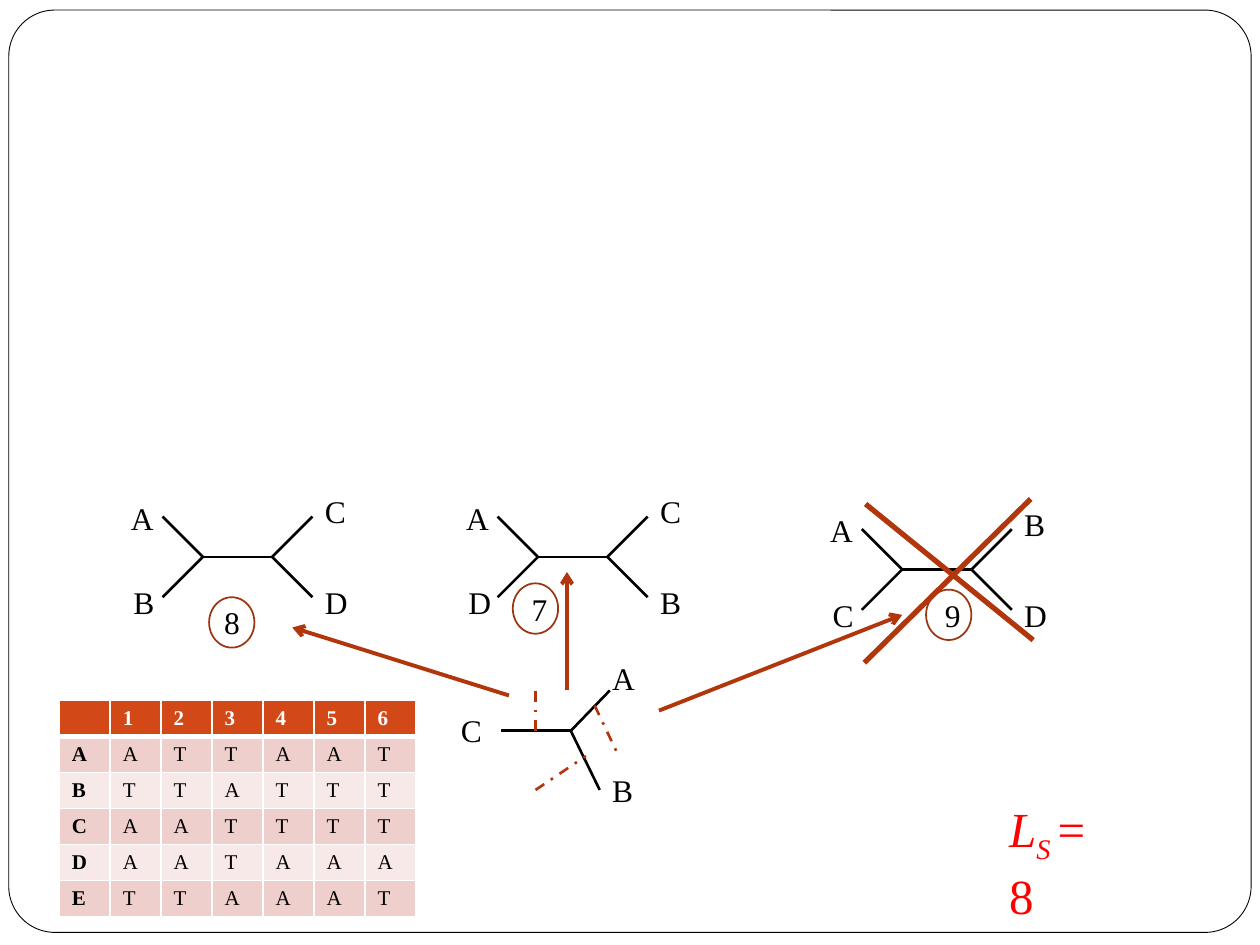
from lxml.etree import SubElement
from pptx import Presentation
from pptx.dml.color import RGBColor
from pptx.enum.dml import MSO_LINE
from pptx.enum.shapes import MSO_CONNECTOR, MSO_SHAPE
from pptx.enum.text import MSO_AUTO_SIZE
from pptx.oxml.ns import qn
from pptx.util import Inches, Pt

FONT = "Times New Roman"
BLACK, WHITE, RED = "000000", "FFFFFF", "FF0000"
RUST, RING, HEADER = "B1360B", "9C3511", "D34817"
BANDS = ("EFCFCC", "F7E9E8")

# Content: character matrix, one string of sites per taxon
SITES = "123456"
MATRIX = {"A": "ATTAAT", "B": "TTATTT", "C": "AATTTT",
          "D": "AATAAA", "E": "TTAAAT"}
TABLE_LEFT, TABLE_TOP, COLUMN, ROW = 0.47, 5.56, 0.4045, 0.24

# Left node of each tree; taxa at upper left, lower left, upper right, lower right
TREES = [((1.61, 4.42), "ABCD"), ((4.27, 4.42), "ADCB"), ((7.16, 4.52), "ACBD")]
SPINE, BRANCH = 0.55, 0.32
LABEL_OFFSETS = [(-0.67, -0.51), (-0.65, 0.16), (0.87, -0.56), (0.87, 0.16)]
LABEL_WIDTHS = {"A": 0.35, "B": 0.33, "C": 0.36, "D": 0.37}
LABEL_HEIGHT = 0.4

# Score, left of its ring, left of its digit, top
SCORES = [("8", 1.66, 1.68, 4.74), ("7", 4.07, 4.12, 4.63), ("9", 7.35, 7.4, 4.68)]

# Three-taxon starting tree: taxon, branch tip, label corner
START_NODE = (4.53, 5.8)
START_TREE = [("A", (4.84, 5.48), (4.76, 5.18)),
              ("B", (4.76, 6.27), (4.76, 6.07)),
              ("C", (3.98, 5.8), (3.56, 5.59))]
INSERTIONS = [((4.25, 5.8), (4.25, 5.45)), ((4.72, 5.6), (4.91, 6)),
              ((4.25, 6.27), (4.65, 6))]
ARROWS = [((4.04, 5.52), (2.32, 4.98)), ((4.5, 5.48), (4.5, 4.54)),
          ((5.23, 5.64), (7.16, 4.88))]
CROSS = [((8.18, 3.96), (6.86, 5.26)), ((6.87, 4), (8.2, 5.08))]


def rgb(color):
    return RGBColor.from_string(color)


def style(font, size, color, bold=False):
    font.name, font.size, font.bold = FONT, Pt(size), bold
    font.color.rgb = rgb(color)


def add_line(shapes, start, end, color=BLACK, width=1.5, dash=None, arrow=False):
    line = shapes.add_connector(MSO_CONNECTOR.STRAIGHT,
                                *(Inches(v) for v in (*start, *end)))
    line.line.color.rgb = rgb(color)
    line.line.width = Pt(width)
    if dash:
        line.line.dash_style = dash
    properties = line._element.spPr
    if arrow:
        SubElement(properties.find(qn("a:ln")), qn("a:tailEnd"), type="arrow")
    SubElement(properties, qn("a:effectLst"))


def add_text(shapes, left, top, width, height, wrap=False):
    box = shapes.add_textbox(*(Inches(v) for v in (left, top, width, height)))
    box.text_frame.word_wrap = wrap
    box.text_frame.auto_size = MSO_AUTO_SIZE.SHAPE_TO_FIT_TEXT
    return box.text_frame.paragraphs[0]


def add_label(shapes, text, left, top):
    label = add_text(shapes, left, top, LABEL_WIDTHS.get(text, 0.32), LABEL_HEIGHT)
    label.text = text
    style(label.font, 18, BLACK)


def add_outline(shapes, kind, left, top, width, height, color, weight):
    outline = shapes.add_shape(kind, *(Inches(v) for v in (left, top, width, height)))
    outline.shadow.inherit = False
    outline.fill.background()
    outline.line.color.rgb = rgb(color)
    outline.line.width = Pt(weight)
    return outline


def add_tree(shapes, node, taxa):
    x, y = node
    right = x + SPINE
    add_line(shapes, (right, y), node)
    for dy in (-BRANCH, BRANCH):
        add_line(shapes, (x - BRANCH, y + dy), node)
        add_line(shapes, (right, y), (right + BRANCH, y + dy))
    for taxon, (dx, dy) in zip(taxa, LABEL_OFFSETS):
        add_label(shapes, taxon, x + dx, y + dy)


def add_borders(cell, top, bottom):
    properties = cell._tc.get_or_add_tcPr()
    for side, width in (("L", 1), ("R", 1), ("T", top), ("B", bottom)):
        border = SubElement(properties, qn(f"a:ln{side}"), w=str(Pt(width)))
        SubElement(SubElement(border, qn("a:solidFill")), qn("a:srgbClr"), val=WHITE)


def add_matrix(shapes):
    rows = [["", *SITES]] + [[taxon, *states] for taxon, states in MATRIX.items()]
    columns = len(rows[0])
    table = shapes.add_table(len(rows), columns, Inches(TABLE_LEFT), Inches(TABLE_TOP),
                             Inches(COLUMN * columns), Inches(ROW * len(rows))).table
    for r, row in enumerate(rows):
        for c, text in enumerate(row):
            cell = table.cell(r, c)
            add_borders(cell, 3 if r == 1 else 1, 3 if r == 0 else 1)
            cell.fill.solid()
            cell.fill.fore_color.rgb = rgb(BANDS[(r - 1) % 2] if r else HEADER)
            cell.text = text
            style(cell.text_frame.paragraphs[0].font, 12,
                  BLACK if r else WHITE, r == 0 or c == 0)


def main():
    deck = Presentation()
    deck.slide_width, deck.slide_height = Inches(10), Inches(7.5)
    shapes = deck.slides.add_slide(deck.slide_layouts[6]).shapes

    # Frame and character matrix
    frame = add_outline(shapes, MSO_SHAPE.ROUNDED_RECTANGLE,
                        0.07, 0.08, 9.86, 7.32, BLACK, 0.5)
    frame.adjustments[0] = 0.05
    frame.fill.solid()
    frame.fill.fore_color.rgb = rgb(WHITE)
    add_matrix(shapes)

    # Starting tree, insertion points and arrows to the larger trees
    for taxon, tip, corner in START_TREE:
        add_line(shapes, START_NODE, tip)
        add_label(shapes, taxon, *corner)
    for start, end in INSERTIONS:
        add_line(shapes, start, end, RUST, dash=MSO_LINE.DASH_DOT)
    for start, end in ARROWS:
        add_line(shapes, start, end, RUST, 2.25, arrow=True)

    # Four-taxon trees and their scores
    for node, taxa in TREES:
        add_tree(shapes.add_group_shape().shapes, node, taxa)
    for score, ring_left, digit_left, top in SCORES:
        group = shapes.add_group_shape().shapes
        add_label(group, score, digit_left, top)
        add_outline(group, MSO_SHAPE.OVAL, ring_left, top, 0.36, 0.4, RING, 1)

    # Bound
    bound = add_text(shapes, 7.91, 6.29, 1.09, 0.57, wrap=True)
    style(bound.font, 28, RED)
    for text, italic, subscript in (("L", True, False), ("S ", True, True),
                                    ("= 8", False, False)):
        run = bound.add_run()
        run.text = text
        run.font.italic = italic
        if subscript:
            run.font._element.set("baseline", "-25000")

    # Rejected tree
    for start, end in CROSS:
        add_line(shapes, start, end, RUST, 3)

    deck.save("out.pptx")


if __name__ == "__main__":
    main()
